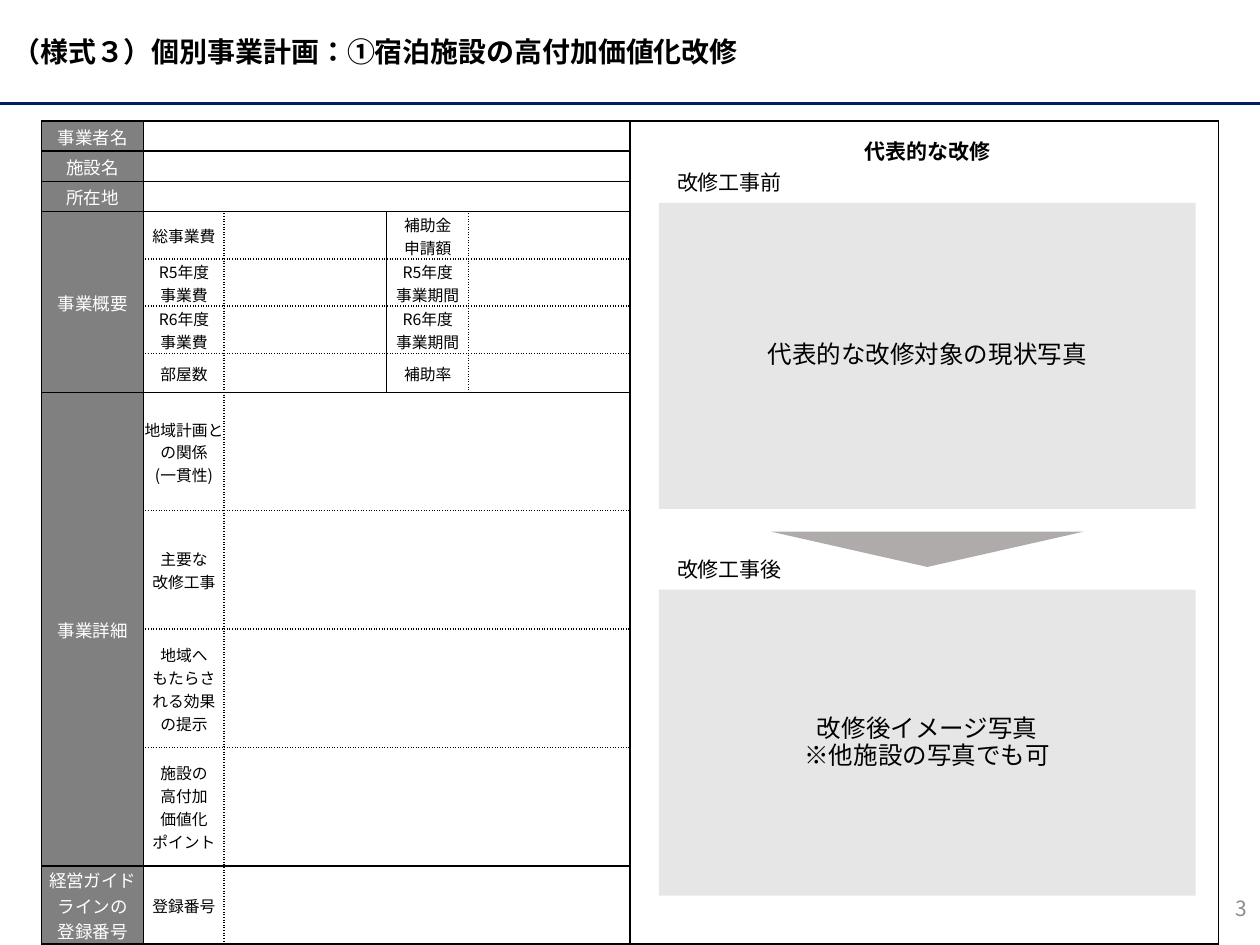
from lxml import etree
from pptx import Presentation
from pptx import util as u
from pptx.dml.color import RGBColor
from pptx.enum import lang, shapes, text
from pptx.oxml import ns

FONT = "Noto Sans CJK JP"
BLACK = RGBColor(0, 0, 0)
WHITE = RGBColor(0xFF, 0xFF, 0xFF)
NAVY = RGBColor(0x00, 0x20, 0x60)
LABEL_GRAY = RGBColor(0x80, 0x80, 0x80)
PHOTO_GRAY = RGBColor(0xE7, 0xE6, 0xE6)
ARROW_GRAY = RGBColor(0xAF, 0xAB, 0xAB)
NUMBER_GRAY = RGBColor(0x8C, 0x8C, 0x8C)

LEFT, CENTER, RIGHT = text.PP_ALIGN.LEFT, text.PP_ALIGN.CENTER, text.PP_ALIGN.RIGHT

COLUMN_WIDTHS = [0.81, 0.64, 1.29, 0.65, 1.28, 4.67]
# Two-line and three-line labels need the taller rows
ROW_HEIGHTS = [0.24] * 3 + [0.375] * 3 + [0.31] + [0.94] * 4 + [0.62]
DOTTED_ROW_LINES = {4, 5, 6, 8, 9, 10}

# (first row, row span, paragraphs)
SECTIONS = [
    (0, 1, ["事業者名"]),
    (1, 1, ["施設名"]),
    (2, 1, ["所在地"]),
    (3, 4, ["事業概要"]),
    (7, 4, ["事業詳細"]),
    (11, 1, ["経営ガイド", "ラインの", "登録番号"]),
]
# (row, column, side inset, paragraphs)
NARROW, WIDE = 0, 0.04
ITEMS = [
    (3, 1, WIDE, ["総事業費"]),
    (3, 3, NARROW, ["補助金", "申請額"]),
    (4, 1, WIDE, ["R5年度", "事業費"]),
    (4, 3, WIDE, ["R5年度", "事業期間"]),
    (5, 1, WIDE, ["R6年度", "事業費"]),
    (5, 3, WIDE, ["R6年度\n事業期間"]),
    (6, 1, WIDE, ["部屋数"]),
    (6, 3, WIDE, ["補助率"]),
    (7, 1, NARROW, ["地域計画との関係\n(一貫性)"]),
    (8, 1, NARROW, ["主要な\n改修工事"]),
    (9, 1, WIDE, ["地域へ", "もたらされる効果の提示"]),
    (10, 1, NARROW, ["施設の", "高付加", "価値化", "ポイント"]),
    (11, 1, NARROW, ["登録番号"]),
]


def write(frame, paragraphs, size, color=BLACK, align=CENTER, bold=False, spacing=None):
    """Fill a text frame; a newline inside a paragraph is a line break."""
    frame.word_wrap = True
    for index, content in enumerate(paragraphs):
        paragraph = frame.paragraphs[0] if index == 0 else frame.add_paragraph()
        paragraph.alignment = align
        if spacing:
            paragraph.line_spacing = spacing
        for number, line in enumerate(content.split("\n")):
            if number:
                paragraph.add_line_break()
            run = paragraph.add_run()
            run.text = line
            font = run.font
            font.size, font.bold, font.name = u.Pt(size), bold, FONT
            font.language_id = lang.MSO_LANGUAGE_ID.JAPANESE
            font.color.rgb = color
            east_asian = etree.SubElement(run._r.get_or_add_rPr(), ns.qn("a:ea"))
            east_asian.set("typeface", FONT)


def add_label(slide, box, content, size, **style):
    label = slide.shapes.add_textbox(*map(u.Inches, box))
    label.text_frame.vertical_anchor = text.MSO_ANCHOR.MIDDLE
    write(label.text_frame, [content], size, **style)


def add_filled_shape(slide, kind, box, color):
    shape = slide.shapes.add_shape(kind, *map(u.Inches, box))
    shape.shadow.inherit = False
    shape.fill.solid()
    shape.fill.fore_color.rgb = color
    shape.line.fill.background()
    return shape


def add_header(slide, left, top, width, height):
    add_label(slide, (left, top, width, height),
              "（様式３）個別事業計画：①宿泊施設の高付加価値化改修", 16, align=LEFT, bold=True)
    rule = slide.shapes.add_connector(
        shapes.MSO_CONNECTOR.STRAIGHT, u.Inches(left), u.Inches(top + height),
        u.Inches(left + width), u.Inches(top + height))
    rule.line.color.rgb = NAVY
    rule.line.width = u.Pt(1.5)
    etree.SubElement(rule._element.spPr, ns.qn("a:effectLst"))


def row_line_is_dotted(line, column):
    return line in DOTTED_ROW_LINES and 1 <= column <= 4


def column_line_is_dotted(line, row):
    return (line == 2 and row >= 3) or (line == 4 and 3 <= row <= 6)


def draw_borders(cell, edges):
    """Draw the given edges, a dict of border tag to dotted flag, in schema order."""
    properties = cell._tc.get_or_add_tcPr()
    for position, (tag, dotted) in enumerate(edges.items()):
        border = etree.Element(ns.qn("a:" + tag), w=str(u.Pt(1)))
        fill = etree.SubElement(border, ns.qn("a:solidFill"))
        etree.SubElement(fill, ns.qn("a:srgbClr"), val=str(BLACK))
        etree.SubElement(border, ns.qn("a:prstDash"), val="sysDot" if dotted else "solid")
        properties.insert(position, border)


def format_block(table, row, column, rows=1, columns=1, color=WHITE):
    """Merge a block of cells, fill it and draw its outline."""
    origin = table.cell(row, column)
    if rows * columns > 1:
        origin.merge(table.cell(row + rows - 1, column + columns - 1))
    for r in range(row, row + rows):
        for c in range(column, column + columns):
            cell = table.cell(r, c)
            cell.fill.solid()
            cell.fill.fore_color.rgb = color
            cell.vertical_anchor = text.MSO_ANCHOR.MIDDLE
            cell.margin_left = cell.margin_right = cell.margin_top = u.Inches(0.01)
            cell.margin_bottom = 0
            is_origin = (r, c) == (row, column)
            edges = {}
            if c == column:
                edges["lnL"] = column_line_is_dotted(c, r)
            if is_origin or c == column + columns - 1:
                edges["lnR"] = column_line_is_dotted(column + columns, r)
            if r == row:
                edges["lnT"] = row_line_is_dotted(r, c)
            if is_origin or r == row + rows - 1:
                edges["lnB"] = row_line_is_dotted(row + rows, c)
            draw_borders(cell, edges)
            # Small end mark keeps empty rows from growing
            etree.SubElement(cell.text_frame.paragraphs[0]._p, ns.qn("a:endParaRPr"), sz="900")
    return origin


def add_plan_table(slide, left, top):
    box = (left, top, sum(COLUMN_WIDTHS), sum(ROW_HEIGHTS))
    table = slide.shapes.add_table(
        len(ROW_HEIGHTS), len(COLUMN_WIDTHS), *map(u.Inches, box)).table
    table.first_row = table.horz_banding = False
    for column, width in zip(table.columns, COLUMN_WIDTHS):
        column.width = u.Inches(width)
    for row, height in zip(table.rows, ROW_HEIGHTS):
        row.height = u.Inches(height)

    for row, span, content in SECTIONS:
        section = format_block(table, row, 0, rows=span, color=LABEL_GRAY)
        write(section.text_frame, content, 10, WHITE)
    for row in range(3):
        format_block(table, row, 1, columns=4)
    for row, column, inset, content in ITEMS:
        item = format_block(table, row, column)
        item.margin_left = item.margin_right = u.Inches(inset)
        write(item.text_frame, content, 9)
        format_block(table, row, column + 1, columns=1 if row < 7 else 3)
    format_block(table, 0, 5, rows=len(ROW_HEIGHTS))


def add_photo_area(slide, left, top, width, height, caption, content):
    add_label(slide, (left - 0.08, top - 0.28, 1.28, 0.23), caption, 12)
    photo = add_filled_shape(slide, shapes.MSO_SHAPE.RECTANGLE,
                             (left, top, width, height), PHOTO_GRAY)
    photo.text_frame.vertical_anchor = text.MSO_ANCHOR.MIDDLE
    write(photo.text_frame, content, 14, spacing=0.92)


def add_renovation_panel(slide, left, top, width):
    add_label(slide, (left, top, width, 0.16), "代表的な改修", 12, bold=True)
    add_photo_area(slide, left, top + 0.49, width, 2.43,
                   "改修工事前", ["代表的な改修対象の現状写真"])
    add_photo_area(slide, left, top + 3.56, width, 2.43,
                   "改修工事後", ["改修後イメージ写真", "※他施設の写真でも可"])
    arrow = add_filled_shape(slide, shapes.MSO_SHAPE.ISOSCELES_TRIANGLE,
                             (left + (width - 2.48) / 2, top + 3.1, 2.48, 0.28), ARROW_GRAY)
    arrow._element.spPr.xfrm.set("flipV", "1")


def main():
    deck = Presentation()
    deck.slide_width, deck.slide_height = u.Inches(10), u.Inches(7.5)
    slide = deck.slides.add_slide(deck.slide_layouts[6])
    add_header(slide, 0, 0, 10, 0.82)
    add_plan_table(slide, 0.33, 0.96)
    add_label(slide, (7.75, 7.01, 2.25, 0.4), "3", 12, color=NUMBER_GRAY, align=RIGHT)
    add_renovation_panel(slide, 5.23, 1.12, 4.26)
    deck.save("out.pptx")


if __name__ == "__main__":
    main()
